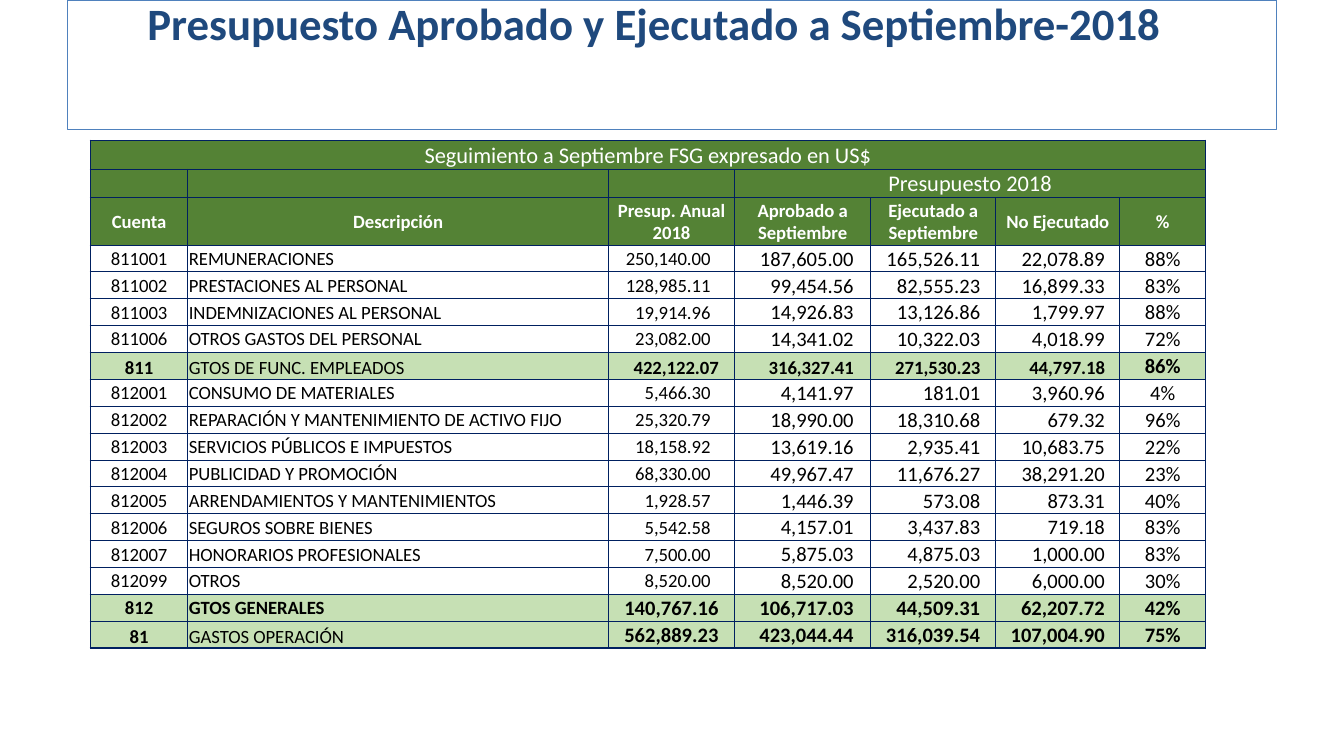
from lxml.etree import SubElement
from pptx import Presentation
from pptx.dml.color import RGBColor
from pptx.enum.text import MSO_ANCHOR as Anchor, MSO_AUTO_SIZE as AutoSize, PP_ALIGN as Align
from pptx.oxml.ns import qn
from pptx.util import Pt

FONT = "Calibri"
NAVY, DARK_GREEN, LIGHT_GREEN = "002060", "548235", "C6E0B4"
COLUMN_WIDTHS = [52, 225.5, 67.5, 73, 67, 66.5, 46]
NUMBER_MARGINS = {2: 12.9, 3: 9.1, 4: 8.3, 5: 8}
TOTAL_MARGIN = 8.5
HEADER_HEIGHTS = [15.5, 15, 25.2]
ROW_HEIGHT = 14.4

HEADINGS = ["Cuenta", "Descripción", "Presup. Anual 2018", "Aprobado a Septiembre",
            "Ejecutado a Septiembre", "No Ejecutado", "%"]
ACCOUNTS = [
    ["811001", "REMUNERACIONES", "250,140.00", "187,605.00", "165,526.11", "22,078.89", "88%"],
    ["811002", "PRESTACIONES AL PERSONAL", "128,985.11", "99,454.56", "82,555.23", "16,899.33", "83%"],
    ["811003", "INDEMNIZACIONES AL PERSONAL", "19,914.96", "14,926.83", "13,126.86", "1,799.97", "88%"],
    ["811006", "OTROS GASTOS DEL PERSONAL", "23,082.00", "14,341.02", "10,322.03", "4,018.99", "72%"],
    ["811", "GTOS DE FUNC. EMPLEADOS", "422,122.07", "316,327.41", "271,530.23", "44,797.18", "86%"],
    ["812001", "CONSUMO DE MATERIALES", "5,466.30", "4,141.97", "181.01", "3,960.96", "4%"],
    ["812002", "REPARACIÓN Y MANTENIMIENTO DE ACTIVO FIJO", "25,320.79", "18,990.00", "18,310.68", "679.32", "96%"],
    ["812003", "SERVICIOS PÚBLICOS E IMPUESTOS", "18,158.92", "13,619.16", "2,935.41", "10,683.75", "22%"],
    ["812004", "PUBLICIDAD Y PROMOCIÓN", "68,330.00", "49,967.47", "11,676.27", "38,291.20", "23%"],
    ["812005", "ARRENDAMIENTOS Y MANTENIMIENTOS", "1,928.57", "1,446.39", "573.08", "873.31", "40%"],
    ["812006", "SEGUROS SOBRE BIENES", "5,542.58", "4,157.01", "3,437.83", "719.18", "83%"],
    ["812007", "HONORARIOS PROFESIONALES", "7,500.00", "5,875.03", "4,875.03", "1,000.00", "83%"],
    ["812099", "OTROS", "8,520.00", "8,520.00", "2,520.00", "6,000.00", "30%"],
    ["812", "GTOS GENERALES", "140,767.16", "106,717.03", "44,509.31", "62,207.72", "42%"],
    ["81", "GASTOS OPERACIÓN", "562,889.23", "423,044.44", "316,039.54", "107,004.90", "75%"],
]


def rgb(value):
    return RGBColor.from_string(value)


def format_text(para, size, color, bold, align):
    para.alignment = align
    for span in para.runs:
        span.font.name, span.font.size, span.font.bold = FONT, Pt(size), bold
        span.font.color.rgb = rgb(color)


def set_borders(cell, widths):
    properties = cell._tc.get_or_add_tcPr()
    for position, (side, width) in enumerate(zip("LRTB", widths)):
        line = SubElement(properties, qn(f"a:ln{side}"), w=str(Pt(width)))
        fill = SubElement(line, qn("a:solidFill"))
        SubElement(fill, qn("a:srgbClr"), val=NAVY)
        properties.insert(position, line)


def fill_cell(cell, text, size, color="000000", bold=False, align=Align.CENTER,
              anchor=Anchor.MIDDLE, fill=None, right_margin=0.7):
    cell.margin_left = cell.margin_top = Pt(0.7)
    cell.margin_right, cell.margin_bottom = Pt(right_margin), Pt(0)
    cell.vertical_anchor = anchor
    if fill:
        cell.fill.solid()
        cell.fill.fore_color.rgb = rgb(fill)
    else:
        cell.fill.background()
    para = cell.text_frame.paragraphs[0]
    if text:
        para.text = text
        format_text(para, size, color, bold, align)
    else:
        SubElement(para._p, qn("a:endParaRPr"), sz=str(size * 100))


def fill_account(table, row, values):
    code = values[0]
    total = len(code) < 6
    fill = LIGHT_GREEN if total else None
    label_anchor = Anchor.BOTTOM if code in ("811", "81") else Anchor.MIDDLE
    for column, text in enumerate(values):
        style = {"size": 10, "bold": total, "anchor": label_anchor, "fill": fill}
        if column == 1:
            style.update(align=Align.LEFT, bold=code == "812")
        elif column in NUMBER_MARGINS:
            small = code == "811" or (column == 2 and not total)
            margin = TOTAL_MARGIN if total and column == 2 else NUMBER_MARGINS[column]
            style.update(size=10 if small else 11, align=Align.RIGHT, right_margin=margin,
                         anchor=Anchor.MIDDLE if column == 2 and not total else Anchor.BOTTOM)
        elif column == 6:
            style.update(size=11, anchor=Anchor.MIDDLE if total else Anchor.BOTTOM)
        fill_cell(table.cell(row, column), text, **style)


def add_title(page, left, top, width, height):
    title = page.shapes.title
    title.left, title.top, title.width, title.height = Pt(left), Pt(top), Pt(width), Pt(height)
    title.line.color.rgb = rgb("4F81BD")
    title.line.width = Pt(0.75)
    frame = title.text_frame
    frame.text = "Presupuesto Aprobado y Ejecutado a Septiembre-2018"
    frame.auto_size, frame.word_wrap = AutoSize.NONE, True
    frame.vertical_anchor = Anchor.TOP
    frame.margin_top, frame.margin_left, frame.margin_right = Pt(0), Pt(7), Pt(26.3)
    para = frame.paragraphs[0]
    para.line_spacing = 0.95
    format_text(para, 24, "1F497D", True, Align.CENTER)


def add_budget_table(page, left, top):
    heights = HEADER_HEIGHTS + [ROW_HEIGHT] * len(ACCOUNTS)
    last_row, last_column = len(heights) - 1, len(COLUMN_WIDTHS) - 1
    table = page.shapes.add_table(len(heights), len(COLUMN_WIDTHS), Pt(left), Pt(top),
                                  Pt(sum(COLUMN_WIDTHS)), Pt(sum(heights))).table
    table.first_row = table.horz_banding = False
    for column, width in zip(table.columns, COLUMN_WIDTHS):
        column.width = Pt(width)
    for row, height in zip(table.rows, heights):
        row.height = Pt(height)

    banners = {(0, 0): "Seguimiento a Septiembre FSG expresado en US$", (1, 3): "Presupuesto 2018"}
    for column, heading in enumerate(HEADINGS):
        for row in range(2):
            fill_cell(table.cell(row, column), banners.get((row, column)), 12, "FFFFFF",
                      anchor=Anchor.BOTTOM, fill=DARK_GREEN)
        fill_cell(table.cell(2, column), heading, 10, "FFFFFF", True, fill=DARK_GREEN)
    for row, values in enumerate(ACCOUNTS, len(HEADER_HEIGHTS)):
        fill_account(table, row, values)

    for row in range(len(heights)):
        for column in range(len(COLUMN_WIDTHS)):
            outer = (column == 0, column == last_column, row == 0, row == last_row)
            set_borders(table.cell(row, column), [1 if edge else 0.5 for edge in outer])
    for row, column in banners:
        table.cell(row, column).merge(table.cell(row, last_column))


def main():
    deck = Presentation()
    deck.slide_width, deck.slide_height = Pt(720), Pt(405)
    page = deck.slides.add_slide(deck.slide_layouts[5])
    add_title(page, 36, 0, 648, 69.5)
    add_budget_table(page, 48.5, 75.2)
    deck.save("out.pptx")


if __name__ == "__main__":
    main()
